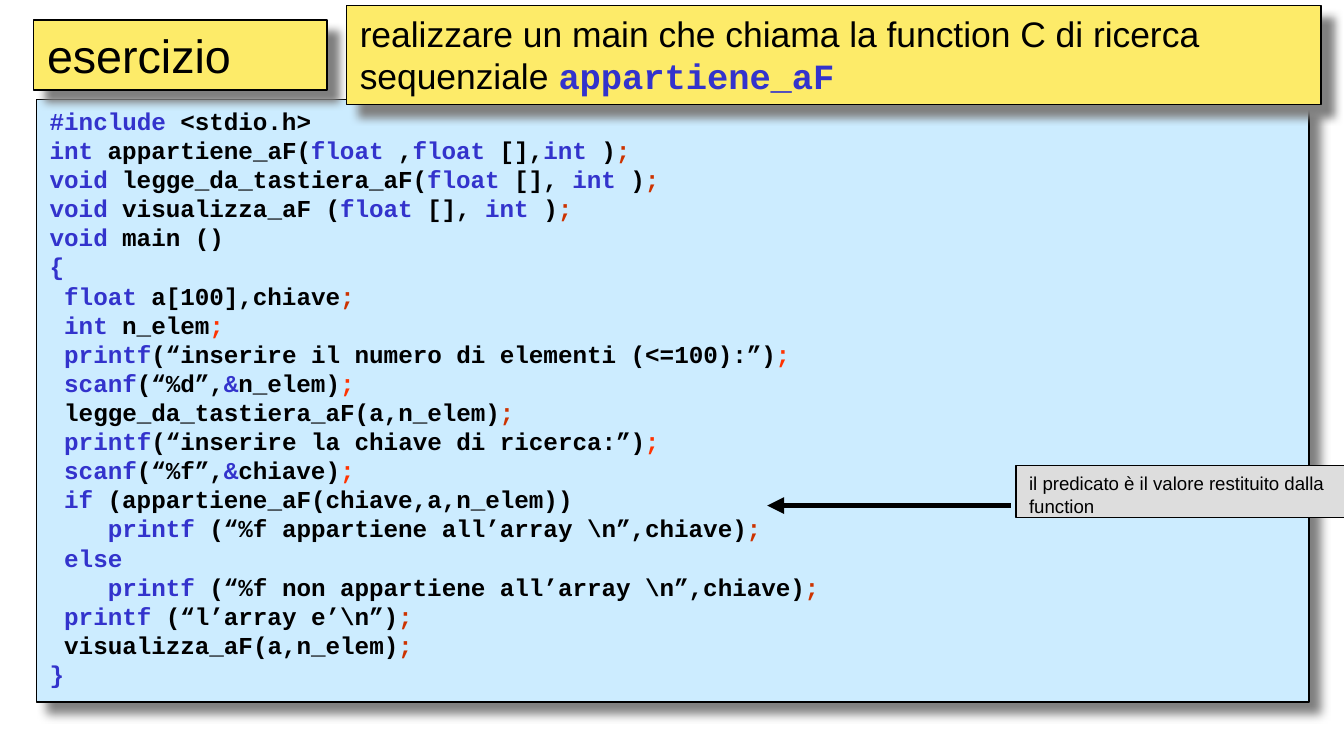
from dataclasses import dataclass

import pptx
import pptx.dml.color
import pptx.enum.shapes
import pptx.enum.text
import pptx.oxml
import pptx.oxml.ns
import pptx.util
from pptx.util import Cm

MARK = "`"  # encloses the words of a line that are highlighted


@dataclass(frozen=True)
class Theme:
    ink: str = "000000"
    keyword: str = "3333CC"
    semicolon: str = "CC3300"
    bright_semicolon: str = "FF3300"
    code_fill: str = "CCECFF"
    heading_fill: str = "FDEB69"
    note_fill: str = "DDDDDD"
    shadow: str = "808080"
    sans: str = "Arial"
    mono: str = "Courier New"
    code_size: float = 13
    code_pitch: float = 15.6
    title_size: float = 25
    task_size: float = 19
    note_size: float = 10
    outline: float = 0.75
    arrow: float = 3


@dataclass(frozen=True)
class Box:
    left: float
    top: float
    width: float
    height: float
    fill: str
    shadowed: bool = True


@dataclass(frozen=True)
class CodeLine:
    text: str
    semicolon: str = ""  # colour of the closing semicolon, if there is one


THEME = Theme()
DARK = THEME.semicolon
BRIGHT = THEME.bright_semicolon

CODE = [
    CodeLine("`#include` <stdio.h>"),
    CodeLine("`int` appartiene_aF(`float` ,`float` [],`int` )", DARK),
    CodeLine("`void` legge_da_tastiera_aF(`float` [], `int` )", DARK),
    CodeLine("`void` visualizza_aF (`float` [], `int` )", DARK),
    CodeLine("`void` main ()"),
    CodeLine("`{`"),
    CodeLine("` float` a[100],chiave", DARK),
    CodeLine("` int` n_elem", BRIGHT),
    CodeLine("` printf`(“inserire il numero di elementi (<=100):”)", BRIGHT),
    CodeLine("` scanf`(“%d”,`&`n_elem)", BRIGHT),
    CodeLine(" legge_da_tastiera_aF(a,n_elem)", DARK),
    CodeLine("` printf`(“inserire la chiave di ricerca:”)", BRIGHT),
    CodeLine("` scanf`(“%f”,`&`chiave)", BRIGHT),
    CodeLine("` if `(appartiene_aF(chiave,a,n_elem))"),
    CodeLine("`    printf` (“%f appartiene all’array \\n”,chiave)", DARK),
    CodeLine("` else`"),
    CodeLine("`    printf` (“%f non appartiene all’array \\n”,chiave)", DARK),
    CodeLine("` printf` (“l’array e’\\n”)", DARK),
    CodeLine(" visualizza_aF(a,n_elem)", DARK),
    CodeLine("`}`"),
]

CODE_BOX = Box(0.69, 1.88, 24.05, 11.38, THEME.code_fill)
TITLE_BOX = Box(0.64, 0.38, 5.54, 1.32, THEME.heading_fill)
TASK_BOX = Box(6.55, 0.1, 18.42, 1.88, THEME.heading_fill)
NOTE_BOX = Box(19.2, 8.79, 6.6, 0.99, THEME.note_fill, shadowed=False)


def rgb(colour: str) -> pptx.dml.color.RGBColor:
    return pptx.dml.color.RGBColor.from_string(colour)


def add_shadow(shape) -> None:
    effects = shape._element.spPr.find(pptx.oxml.ns.qn("a:effectLst"))
    effects.append(pptx.oxml.parse_xml(
        f'<a:outerShdw {pptx.oxml.ns.nsdecls("a")} blurRad="{pptx.util.Pt(5)}" '
        f'dist="{pptx.util.Pt(8.5)}" dir="2700000" algn="ctr" rotWithShape="0">'
        f'<a:srgbClr val="{THEME.shadow}"/></a:outerShdw>'))


def add_box(slide, box: Box):
    """Draw an outlined box and return its text frame."""
    shape = slide.shapes.add_shape(
        pptx.enum.shapes.MSO_SHAPE.RECTANGLE,
        Cm(box.left), Cm(box.top), Cm(box.width), Cm(box.height))
    shape.fill.solid()
    shape.fill.fore_color.rgb = rgb(box.fill)
    shape.line.color.rgb = rgb(THEME.ink)
    shape.line.width = pptx.util.Pt(THEME.outline)
    shape.shadow.inherit = False
    if box.shadowed:
        add_shadow(shape)
    frame = shape.text_frame
    frame.word_wrap = True
    frame.auto_size = pptx.enum.text.MSO_AUTO_SIZE.SHAPE_TO_FIT_TEXT
    frame.vertical_anchor = pptx.enum.text.MSO_ANCHOR.TOP
    return frame


def add_run(paragraph, text: str, size: float, colour: str, mono: bool) -> None:
    run = paragraph.add_run()
    run.text = text
    run.font.name = THEME.mono if mono else THEME.sans
    run.font.size = pptx.util.Pt(size)
    run.font.bold = mono
    run.font.color.rgb = rgb(colour)


def write_marked(paragraph, text: str, size: float, mono: bool) -> None:
    """Write text whose marked parts become bold monospaced keywords."""
    paragraph.alignment = pptx.enum.text.PP_ALIGN.LEFT
    for index, part in enumerate(text.split(MARK)):
        marked = index % 2 == 1
        if part:
            add_run(paragraph, part, size,
                    THEME.keyword if marked else THEME.ink, mono or marked)


def add_message(slide, box: Box, text: str, size: float) -> None:
    write_marked(add_box(slide, box).paragraphs[0], text, size, mono=False)


def add_code(slide, box: Box, lines: list[CodeLine]) -> None:
    frame = add_box(slide, box)
    for index, line in enumerate(lines):
        paragraph = frame.add_paragraph() if index else frame.paragraphs[0]
        paragraph.line_spacing = pptx.util.Pt(THEME.code_pitch)
        write_marked(paragraph, line.text, THEME.code_size, mono=True)
        if line.semicolon:
            add_run(paragraph, ";", THEME.code_size, line.semicolon, mono=True)


def add_arrow(slide, start: float, end: float, height: float) -> None:
    arrow = slide.shapes.add_connector(
        pptx.enum.shapes.MSO_CONNECTOR.STRAIGHT,
        Cm(start), Cm(height), Cm(end), Cm(height))
    arrow.line.color.rgb = rgb(THEME.ink)
    arrow.line.width = pptx.util.Pt(THEME.arrow)
    namespace = pptx.oxml.ns.nsdecls("a")
    arrow.line._get_or_add_ln().append(
        pptx.oxml.parse_xml(f'<a:tailEnd {namespace} type="triangle"/>'))
    arrow._element.spPr.append(
        pptx.oxml.parse_xml(f"<a:effectLst {namespace}/>"))


def main() -> None:
    presentation = pptx.Presentation()
    presentation.slide_width = Cm(25.4)
    presentation.slide_height = Cm(14.28)
    slide = presentation.slides.add_slide(presentation.slide_layouts[6])
    add_code(slide, CODE_BOX, CODE)
    add_message(slide, TITLE_BOX, "esercizio", THEME.title_size)
    add_message(
        slide, TASK_BOX,
        "realizzare un main che chiama la function C di ricerca sequenziale "
        "`appartiene_aF`", THEME.task_size)
    add_message(
        slide, NOTE_BOX,
        "il predicato è il valore restituito dalla function", THEME.note_size)
    add_arrow(slide, start=19.1, end=14.5, height=9.55)
    presentation.save("out.pptx")


if __name__ == "__main__":
    main()
